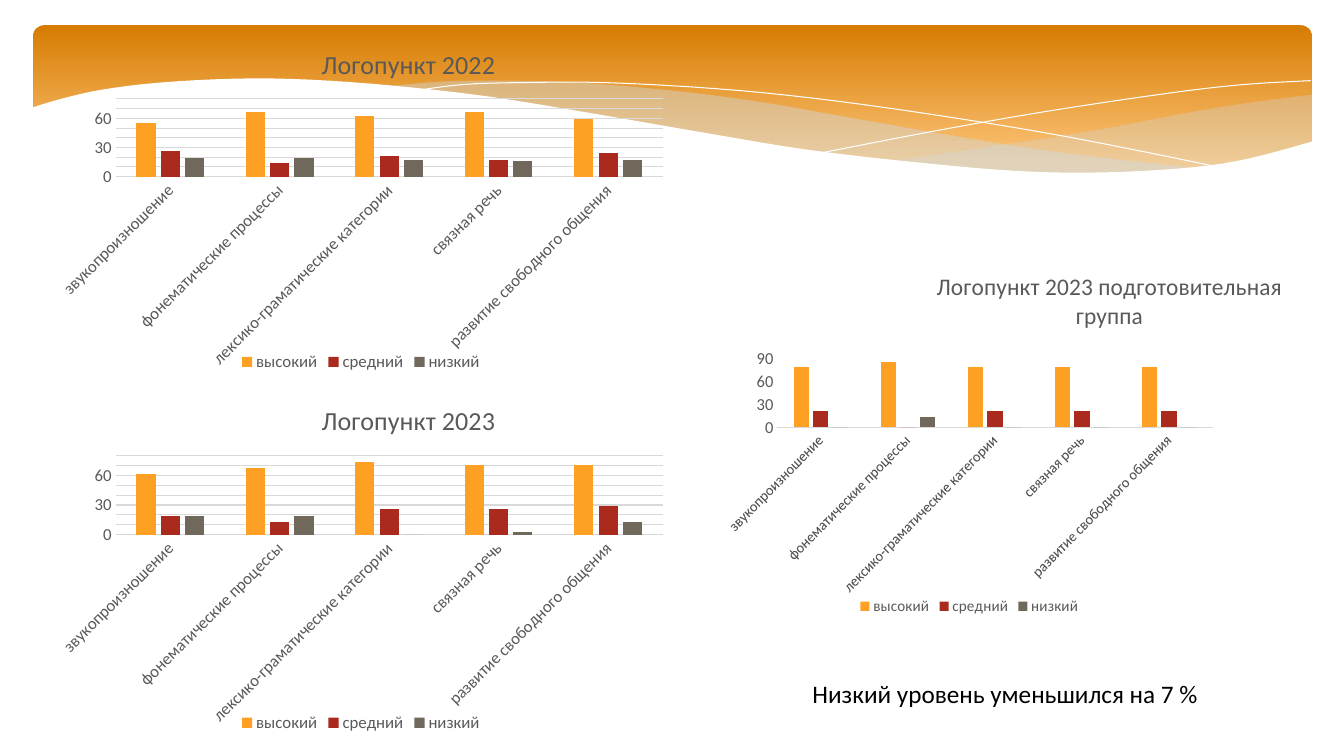
from lxml import etree
from pptx import Presentation
from pptx import util as u
from pptx.chart.data import CategoryChartData
from pptx.dml.color import RGBColor
from pptx.enum import chart as ch, shapes, text
from pptx.oxml import parse_xml
from pptx.oxml.ns import nsdecls, qn

FONT = "Calibri"
GREY, GRID = "595959", "D9D9D9"
LEVELS = {"высокий": "FDA023", "средний": "AA2B1E", "низкий": "71685C"}
SKILLS = ["звукопроизношение", "фонематические процессы",
          "лексико-граматические категории", "связная речь",
          "развитие свободного общения"]

# Knots of the wave curves, in inches
RIGHT_TOP = [(13.01, 0.94), (12.46, 1.01), (11.88, 1.1), (11.1, 1.25),
             (10.38, 1.37), (9.72, 1.47), (8.82, 1.6)]
RIGHT_BOTTOM = [(8.82, 1.6), (9.58, 1.67), (10.25, 1.71), (10.85, 1.72),
                (11.38, 1.7), (11.96, 1.65), (12.47, 1.56), (13.01, 1.42)]
MIDDLE_TOP = [(11.9, 1.67), (11.16, 1.59), (10.34, 1.49), (9.41, 1.34),
              (8.39, 1.16), (7.59, 1.02), (6.86, 0.92), (5.89, 0.83),
              (5.06, 0.8), (4.37, 0.81), (3.82, 0.86)]
MIDDLE_BOTTOM = [(3.82, 0.86), (4.83, 0.97), (5.99, 1.16), (7.06, 1.35),
                 (8.02, 1.5), (8.87, 1.61), (9.63, 1.68), (10.3, 1.72),
                 (10.9, 1.73), (11.43, 1.71), (11.9, 1.67)]
FALLING_LINE = [(4.12, 0.9), (4.58, 0.84), (5.16, 0.82), (6, 0.82),
                (7.1, 0.88), (8.11, 0.98), (9.27, 1.14), (10.6, 1.36),
                (12.1, 1.66)]
RISING_LINE = [(8.18, 1.51), (9.27, 1.3), (10.35, 1.11), (11.55, 0.93),
               (12.32, 0.84), (13, 0.8)]
PAGE_EDGE = [(13.03, 1.4), (12.4, 1.57), (11.83, 1.66), (10.97, 1.71),
             (10.15, 1.7), (9.18, 1.62), (8.04, 1.49), (7.06, 1.33),
             (5.96, 1.14), (4.86, 0.96), (3.9, 0.85), (3.06, 0.79),
             (2.35, 0.78), (1.58, 0.82), (1.01, 0.89), (0.61, 0.98),
             (0.31, 1.07)]


def colour(value):
    return RGBColor.from_string(value)


def set_font(font, size, value):
    font.name, font.size, font.bold = FONT, u.Pt(size), False
    font.color.rgb = colour(value)


def smooth(knots, steps=4):
    """Points of a Catmull-Rom curve through the knots."""
    padded = [knots[0], *knots, knots[-1]]
    points = [knots[0]]
    for a, b, c, d in zip(padded, padded[1:], padded[2:], padded[3:]):
        for t in (step / steps for step in range(1, steps + 1)):
            points.append(tuple(
                (2 * q + (r - p) * t + (2 * p - 5 * q + 4 * r - s) * t ** 2
                 + (3 * q - p - 3 * r + s) * t ** 3) / 2
                for p, q, r, s in zip(a, b, c, d)))
    return points


def add_outline(slide, points, fill=None, opacity=100, line=None):
    points = [(u.Inches(x), u.Inches(y)) for x, y in points]
    builder = slide.shapes.build_freeform(*points[0])
    builder.add_line_segments(points[1:], close=fill is not None)
    shape = builder.convert_to_shape()
    shape.shadow.inherit = False
    if fill:
        shape.fill.solid()
        shape.fill.fore_color.rgb = colour(fill)
        shape.line.fill.background()
        if opacity < 100:
            value = shape.fill._xPr.find(".//" + qn("a:srgbClr"))
            etree.SubElement(value, qn("a:alpha"), val=str(opacity * 1000))
    else:
        shape.fill.background()
        shape.line.color.rgb = colour(line)
        shape.line.width = u.Pt(0)


def add_band(slide):
    band = slide.shapes.add_shape(
        shapes.MSO_SHAPE.ROUNDED_RECTANGLE, u.Inches(0.33), u.Inches(0.25),
        u.Inches(12.68), u.Inches(1.56))
    band.adjustments[0] = 0.07
    band.shadow.inherit = False
    band.line.fill.background()
    band.fill.gradient()
    band.fill.gradient_angle = 270
    stops = [(0, "D67C02"), (0.9, "FEC67B")]
    for stop, (position, value) in zip(band.fill.gradient_stops, stops):
        stop.position = position
        stop.color.rgb = colour(value)


def place(element, index, **fractions):
    """Give a chart part a manual layout in fractions of the chart."""
    for old in element.findall(qn("c:layout")):
        element.remove(old)
    inner = '<c:layoutTarget val="inner"/>' if "w" in fractions else ""
    modes = '<c:xMode val="edge"/><c:yMode val="edge"/>'
    values = "".join(f'<c:{k} val="{v}"/>' for k, v in fractions.items())
    element.insert(index, parse_xml(
        f'<c:layout {nsdecls("c")}><c:manualLayout>{inner}{modes}{values}'
        "</c:manualLayout></c:layout>"))


def add_levels_chart(slide, title, box, values, plot, top, title_at,
                     title_size=18.6, label_size=12, legend_size=12,
                     grid=True, legend_at=None):
    data = CategoryChartData()
    data.categories = SKILLS
    for name, numbers in zip(LEVELS, values):
        data.add_series(name, numbers)
    chart = slide.shapes.add_chart(
        ch.XL_CHART_TYPE.COLUMN_CLUSTERED, *map(u.Inches, box), data).chart
    set_font(chart.font, 12, GREY)

    # Title and legend
    chart.has_title = True
    frame = chart.chart_title.text_frame
    frame.text = title
    for paragraph in frame.paragraphs:
        set_font(paragraph.runs[0].font, title_size, GREY)
    place(chart.chart_title._element, 1, x=title_at[0], y=title_at[1])
    chart.has_legend = True
    chart.legend.position = ch.XL_LEGEND_POSITION.BOTTOM
    chart.legend.include_in_layout = False
    set_font(chart.legend.font, legend_size, GREY)
    if legend_at:
        place(chart.legend._element, 1, x=legend_at[0], y=legend_at[1])

    # Columns
    columns = chart.plots[0]
    columns.gap_width, columns.overlap = 219, -27
    columns.vary_by_categories = False
    for series, value in zip(columns.series, LEVELS.values()):
        series.format.fill.solid()
        series.format.fill.fore_color.rgb = colour(value)
        series.invert_if_negative = False

    # Axes
    skills, scores = chart.category_axis, chart.value_axis
    for axis, size in ((skills, label_size), (scores, 12)):
        axis.major_tick_mark = axis.minor_tick_mark = ch.XL_TICK_MARK.NONE
        set_font(axis.tick_labels.font, size, GREY)
    skills._element.txPr.bodyPr.set("rot", "-2700000")
    skills.format.line.color.rgb = colour(GRID)
    skills.format.line.width = u.Pt(0.75)
    scores.format.line.fill.background()
    scores.minimum_scale, scores.maximum_scale = 0, top
    scores.major_unit = 10
    scores.has_major_gridlines = grid
    if grid:
        scores.major_gridlines.format.line.color.rgb = colour(GRID)
        scores.major_gridlines.format.line.width = u.Pt(0.75)
    place(chart._chartSpace.chart.plotArea, 0, **dict(zip("xywh", plot)))


def add_text(slide, content, box, size=18, value="000000"):
    frame = slide.shapes.add_textbox(*map(u.Inches, box)).text_frame
    frame.word_wrap = True
    frame.auto_size = text.MSO_AUTO_SIZE.SHAPE_TO_FIT_TEXT
    frame.text = content
    set_font(frame.paragraphs[0].runs[0].font, size, value)


def main():
    presentation = Presentation()
    presentation.slide_width = u.Inches(13.33)
    presentation.slide_height = u.Inches(7.5)
    slide = presentation.slides.add_slide(presentation.slide_layouts[6])

    # Wavy header
    add_band(slide)
    add_outline(slide, smooth(RIGHT_TOP) + smooth(RIGHT_BOTTOM), "CCDDEA", 29)
    add_outline(slide, smooth(MIDDLE_TOP) + smooth(MIDDLE_BOTTOM), "CCDDEA", 40)
    for knots in (FALLING_LINE, RISING_LINE):
        add_outline(slide, smooth(knots), line="FFFFFF")
    add_outline(slide, smooth(PAGE_EDGE) + [(0.31, 2.24), (13.03, 2.24)], "FFFFFF")

    # Charts
    add_levels_chart(
        slide, "Логопункт 2023 подготовительная\nгруппа", (7.1, 2.54, 5.65, 3.62),
        [(79, 86, 79, 79, 79), (21, 0, 21, 21, 21), (0, 14, 0, 0, 0)],
        plot=(0.11, 0.26, 0.78, 0.21), top=100, title_at=(0.39, 0.03),
        title_size=17, label_size=10.5, legend_size=11, grid=False,
        legend_at=(0.25, 0.94))
    add_levels_chart(
        slide, "Логопункт 2022", (0.46, 0.38, 6.24, 3.35),
        [(55, 67, 62, 67, 59), (26, 14, 21, 17, 24), (19, 19, 17, 16, 17)],
        plot=(0.11, 0.18, 0.87, 0.23), top=80, title_at=(0.43, 0.01))
    add_levels_chart(
        slide, "Логопункт 2023", (0.46, 3.91, 6.24, 3.4),
        [(61, 68, 74, 71, 71), (19, 13, 26, 26, 29), (19, 19, 0, 3, 13)],
        plot=(0.11, 0.18, 0.87, 0.23), top=80, title_at=(0.43, 0.01))

    # Conclusion
    add_text(slide, "Низкий уровень уменьшился на 7 %", (7.96, 6.68, 4.14, 0.4))
    presentation.save("out.pptx")


if __name__ == "__main__":
    main()
